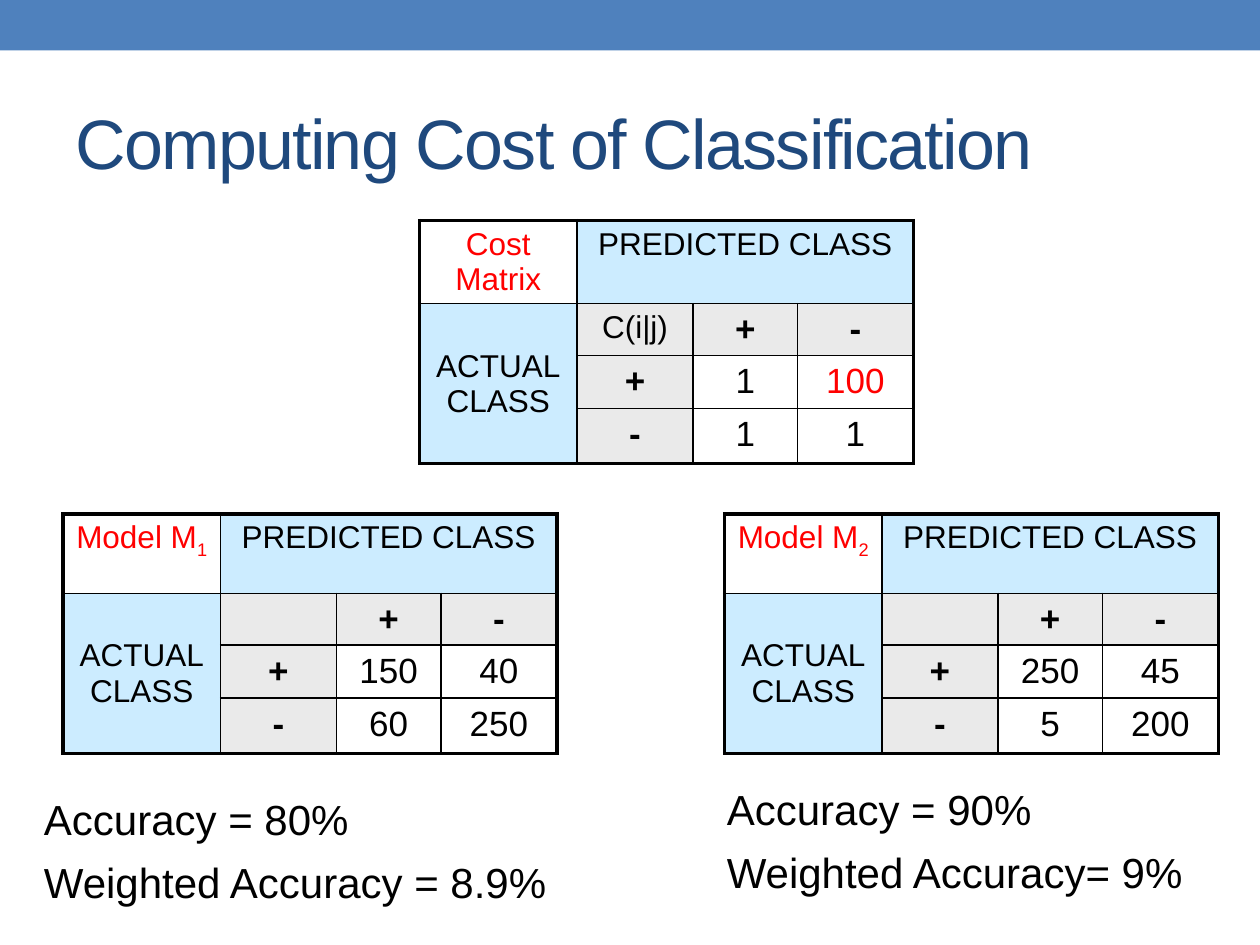
from dataclasses import dataclass

from lxml import etree
from pptx import Presentation
from pptx import util as u
from pptx.dml.color import RGBColor
from pptx.enum import shapes, text
from pptx.oxml import ns


@dataclass(frozen=True)
class Theme:
    font: str = "Arial"
    bar: str = "4F81BD"
    title: str = "1F497D"
    ink: str = "000000"
    accent: str = "FF0000"
    paper: str = "FFFFFF"
    class_fill: str = "CCECFF"
    sign_fill: str = "EAEAEA"
    title_size: float = 40
    body_size: float = 24
    value_size: float = 20
    label_size: float = 18
    outer_line: float = 2.25
    inner_line: float = 1


def apply(target, values):
    for name, value in values.items():
        setattr(target, name, value)


class SlideBuilder:
    COLUMNS = (1.25, 0.92, 0.83, 0.92)
    ROWS = (0.63, 0.38, 0.42, 0.44)

    def __init__(self, slide, theme):
        self.slide = slide
        self.theme = theme

    def style(self, font, size, color, bold=False):
        apply(font, {"name": self.theme.font, "size": u.Pt(size), "bold": bold})
        font.color.rgb = RGBColor.from_string(color)

    def bar(self, left, top, width, height):
        shape = self.slide.shapes.add_shape(
            shapes.MSO_SHAPE.RECTANGLE, *map(u.Inches, (left, top, width, height)))
        shape.shadow.inherit = False
        shape.fill.solid()
        shape.fill.fore_color.rgb = RGBColor.from_string(self.theme.bar)
        shape.line.fill.background()

    def title(self, wording, left, top, width, height):
        shape = self.slide.shapes.title
        apply(shape, {"left": u.Inches(left), "top": u.Inches(top),
                      "width": u.Inches(width), "height": u.Inches(height)})
        frame = shape.text_frame
        apply(frame, {"vertical_anchor": text.MSO_ANCHOR.MIDDLE, "word_wrap": True})
        paragraph = frame.paragraphs[0]
        paragraph.alignment = text.PP_ALIGN.LEFT
        run = paragraph.add_run()
        run.text = wording
        self.style(run.font, self.theme.title_size, self.theme.title)
        run._r.get_or_add_rPr().set("spc", "-100")

    def results(self, lines, left, top, width, height):
        """Write one hanging-indent paragraph for each line."""
        frame = self.slide.shapes.add_textbox(
            *map(u.Inches, (left, top, width, height))).text_frame
        frame.word_wrap = True
        for index, line in enumerate(lines):
            paragraph = frame.add_paragraph() if index else frame.paragraphs[0]
            apply(paragraph, {"space_before": u.Pt(3), "space_after": u.Pt(4)})
            properties = paragraph._p.get_or_add_pPr()
            properties.set("marL", str(u.Inches(0.32)))
            properties.set("indent", str(-u.Inches(0.32)))
            run = paragraph.add_run()
            run.text = line
            self.style(run.font, self.theme.body_size, self.theme.ink)

    def borders(self, cell, row, column):
        """Draw thick lines on the table's outer edge and thin lines inside."""
        last_row = row + (cell.span_height if cell.is_merge_origin else 1)
        last_column = column + (cell.span_width if cell.is_merge_origin else 1)
        edges = {"L": column == 0, "R": last_column == len(self.COLUMNS),
                 "T": row == 0, "B": last_row == len(self.ROWS)}
        properties = cell._tc.get_or_add_tcPr()
        for side, outer in edges.items():
            if cell.is_spanned and not outer:
                continue
            width = self.theme.outer_line if outer else self.theme.inner_line
            line = etree.SubElement(properties, ns.qn(f"a:ln{side}"), w=str(u.Pt(width)))
            fill = etree.SubElement(line, ns.qn("a:solidFill"))
            etree.SubElement(fill, ns.qn("a:srgbClr"), val=self.theme.ink)

    def cell(self, cell, wording, fill, size, color, bold=False, subscript=""):
        cell.fill.solid()
        cell.fill.fore_color.rgb = RGBColor.from_string(fill)
        paragraph = cell.text_frame.paragraphs[0]
        paragraph.text = wording
        apply(paragraph, {"alignment": text.PP_ALIGN.CENTER, "space_after": u.Pt(4)})
        if subscript:
            run = paragraph.add_run()
            run.text = subscript
            run._r.get_or_add_rPr().set("baseline", "-25000")
        for run in paragraph.runs:
            self.style(run.font, size, color, bold)

    def matrix(self, left, top, name, values, subscript="", corner="", highlight=None):
        """Build a two-class table of actual against predicted class."""
        theme = self.theme
        table = self.slide.shapes.add_table(
            len(self.ROWS), len(self.COLUMNS), u.Inches(left), u.Inches(top),
            u.Inches(sum(self.COLUMNS)), u.Inches(sum(self.ROWS))).table
        apply(table, {"first_row": False, "horz_banding": False})
        for column, width in zip(table.columns, self.COLUMNS):
            column.width = u.Inches(width)
        for row, height in zip(table.rows, self.ROWS):
            row.height = u.Inches(height)
        table.cell(0, 1).merge(table.cell(0, 3))
        table.cell(1, 0).merge(table.cell(3, 0))
        for row in range(len(self.ROWS)):
            for column in range(len(self.COLUMNS)):
                self.borders(table.cell(row, column), row, column)

        label = {"size": theme.label_size, "color": theme.ink}
        self.cell(table.cell(0, 0), name, theme.paper, theme.label_size,
                  theme.accent, subscript=subscript)
        self.cell(table.cell(0, 1), "PREDICTED CLASS", theme.class_fill, **label)
        self.cell(table.cell(1, 0), "ACTUAL\vCLASS", theme.class_fill, **label)
        table.cell(1, 0).vertical_anchor = text.MSO_ANCHOR.MIDDLE
        self.cell(table.cell(1, 1), corner, theme.sign_fill, **label)
        for index, sign in enumerate("+-", start=2):
            for position in ((1, index), (index, 1)):
                self.cell(table.cell(*position), sign, theme.sign_fill,
                          theme.value_size, theme.ink, bold=True)
        for row, row_values in enumerate(values, start=2):
            for column, value in enumerate(row_values, start=2):
                color = theme.accent if value == highlight else theme.ink
                self.cell(table.cell(row, column), str(value), theme.paper,
                          theme.value_size, color)


def main():
    presentation = Presentation()
    apply(presentation, {"slide_width": u.Inches(10), "slide_height": u.Inches(7.5)})
    slide = presentation.slides.add_slide(presentation.slide_layouts[5])
    builder = SlideBuilder(slide, Theme())

    builder.bar(0, 0, 10, 0.4)
    builder.title("Computing Cost of Classification", 0.5, 0.58, 9, 1.08)
    builder.matrix(3.33, 1.75, "Cost Matrix", ((1, 100), (1, 1)),
                   corner="C(i|j)", highlight=100)
    builder.matrix(0.5, 4.08, "Model M", ((150, 40), (60, 250)), subscript="1")
    builder.matrix(5.75, 4.08, "Model M", ((250, 45), (5, 200)), subscript="2")
    builder.results(("Accuracy = 80%", "Weighted Accuracy = 8.9%"),
                    0.25, 6.25, 4.25, 1.08)
    builder.results(("Accuracy = 90%", "Weighted Accuracy= 9%"),
                    5.67, 6.17, 4.08, 1.08)
    presentation.save("out.pptx")


if __name__ == "__main__":
    main()
